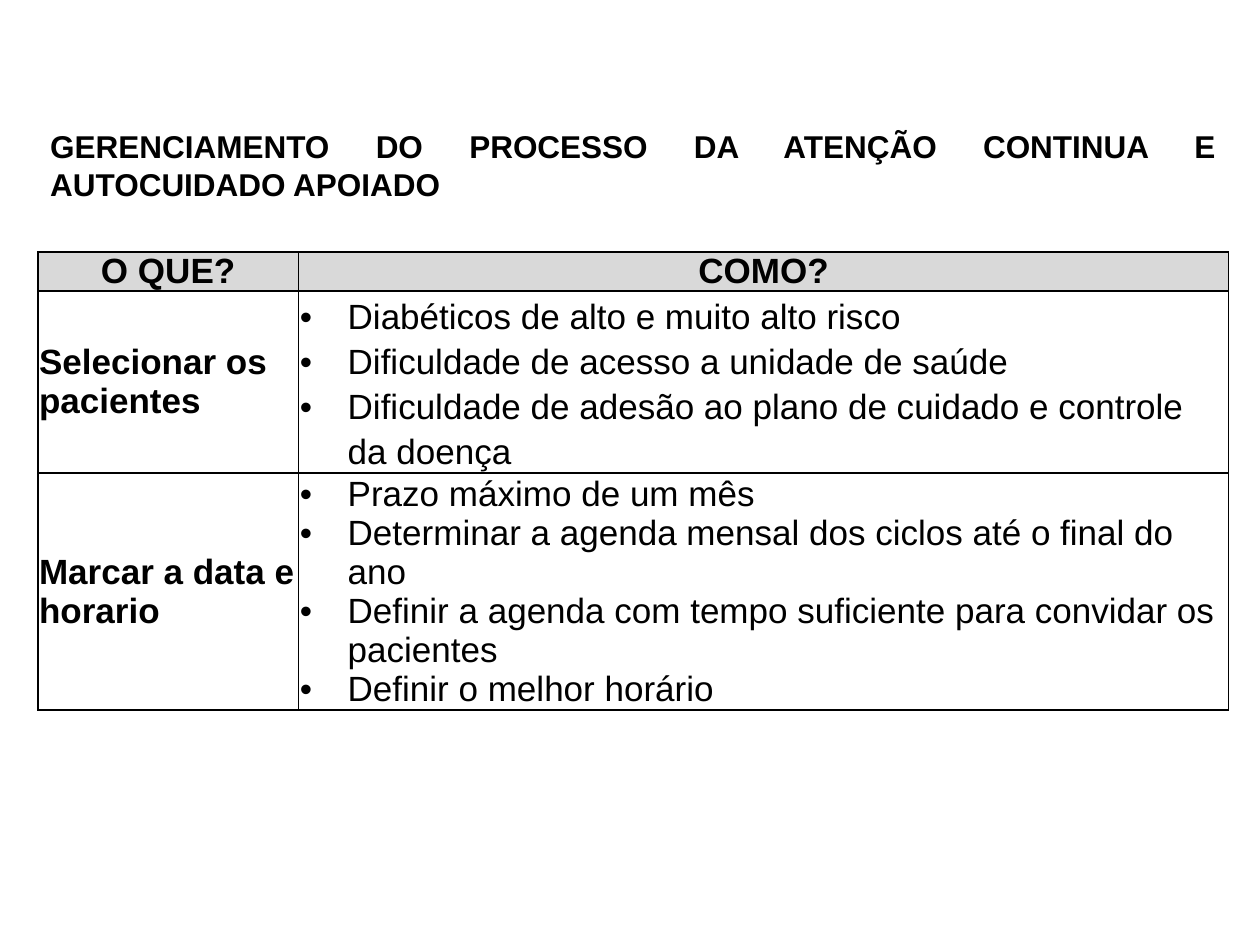
from lxml import etree
from pptx import Presentation
from pptx import util as u
from pptx.dml.color import RGBColor
from pptx.enum import text
from pptx.oxml import ns

COLORS = {"ink": "000000", "header": "D9D9D9", "body": "FFFFFF"}
FONT = "Arial"
TITLE = "GERENCIAMENTO DO PROCESSO DA ATENÇÃO CONTINUA E AUTOCUIDADO APOIADO"
HEADERS = ["O QUE?", "COMO?"]
# Each step: what, how, line spacing of the bullets
STEPS = [
    ("Selecionar os pacientes",
     ["Diabéticos de alto e muito alto risco",
      "Dificuldade de acesso a unidade de saúde",
      "Dificuldade de adesão ao plano de cuidado e controle da doença"], 1.15),
    ("Marcar a data e horario",
     ["Prazo máximo de um mês",
      "Determinar a agenda mensal dos ciclos até o final do ano",
      "Definir a agenda com tempo suficiente para convidar os pacientes",
      "Definir o melhor horário"], 1.0),
]
COL_WIDTHS = [2.07, 7.38]
ROW_HEIGHTS = [0.31, 1.43, 1.87]


def rgb(name):
    return RGBColor.from_string(COLORS[name])


def format_runs(tf, size, bold):
    for p in tf.paragraphs:
        for r in p.runs:
            r.font.name, r.font.size, r.font.bold = FONT, u.Pt(size), bold
            r.font.color.rgb = rgb("ink")


def add_bullet(p, spacing):
    p.line_spacing = spacing
    pPr = p._p.get_or_add_pPr()
    indent = u.Inches(0.38)
    pPr.set("marL", str(indent))
    pPr.set("indent", str(-indent))
    etree.SubElement(pPr, ns.qn("a:buFont")).set("typeface", FONT)
    etree.SubElement(pPr, ns.qn("a:buChar")).set("char", "•")


def add_borders(cell):
    tcPr = cell._tc.get_or_add_tcPr()
    for i, side in enumerate(("lnL", "lnR", "lnT", "lnB")):
        ln = etree.Element(ns.qn(f"a:{side}"), w=str(u.Pt(1)))
        fill = etree.SubElement(ln, ns.qn("a:solidFill"))
        etree.SubElement(fill, ns.qn("a:srgbClr")).set("val", COLORS["ink"])
        tcPr.insert(i, ln)


def fill_cell(cell, content, fill, bold, pad):
    cell.fill.solid()
    cell.fill.fore_color.rgb = rgb(fill)
    cell.vertical_anchor = text.MSO_ANCHOR.MIDDLE
    cell.margin_left = cell.margin_right = u.Inches(0.01)
    cell.margin_top = cell.margin_bottom = u.Inches(pad)
    cell.text_frame.text = content
    format_runs(cell.text_frame, 20, bold)
    add_borders(cell)


def add_title(slide, left, top, width, height):
    tf = slide.shapes.add_textbox(left, top, width, height).text_frame
    tf.word_wrap = True
    tf.auto_size = text.MSO_AUTO_SIZE.SHAPE_TO_FIT_TEXT
    tf.text = TITLE
    tf.paragraphs[0].alignment = text.PP_ALIGN.JUSTIFY
    format_runs(tf, 18, True)


def add_steps_table(slide, left, top, width, height):
    table = slide.shapes.add_table(len(STEPS) + 1, len(HEADERS),
                                   left, top, width, height).table
    for column, w in zip(table.columns, COL_WIDTHS):
        column.width = u.Inches(w)
    for row, h in zip(table.rows, ROW_HEIGHTS):
        row.height = u.Inches(h)

    # Header row
    for col, header in enumerate(HEADERS):
        cell = table.cell(0, col)
        fill_cell(cell, header, "header", True, 0)
        cell.text_frame.paragraphs[0].alignment = text.PP_ALIGN.CENTER

    # One row per step
    for row, (what, how, spacing) in enumerate(STEPS, start=1):
        fill_cell(table.cell(row, 0), what, "body", True, 0.01)
        cell = table.cell(row, 1)
        fill_cell(cell, "\n".join(how), "body", False, 0.01)
        for p in cell.text_frame.paragraphs:
            add_bullet(p, spacing)


def main():
    prs = Presentation()
    prs.slide_width, prs.slide_height = u.Inches(10), u.Inches(7.5)
    slide = prs.slides.add_slide(prs.slide_layouts[6])
    left, width = u.Inches(0.3), u.Inches(sum(COL_WIDTHS))
    add_steps_table(slide, left, u.Inches(2), width, u.Inches(sum(ROW_HEIGHTS)))
    add_title(slide, left, u.Inches(0.96), width, u.Inches(0.71))
    prs.save("out.pptx")


if __name__ == "__main__":
    main()
